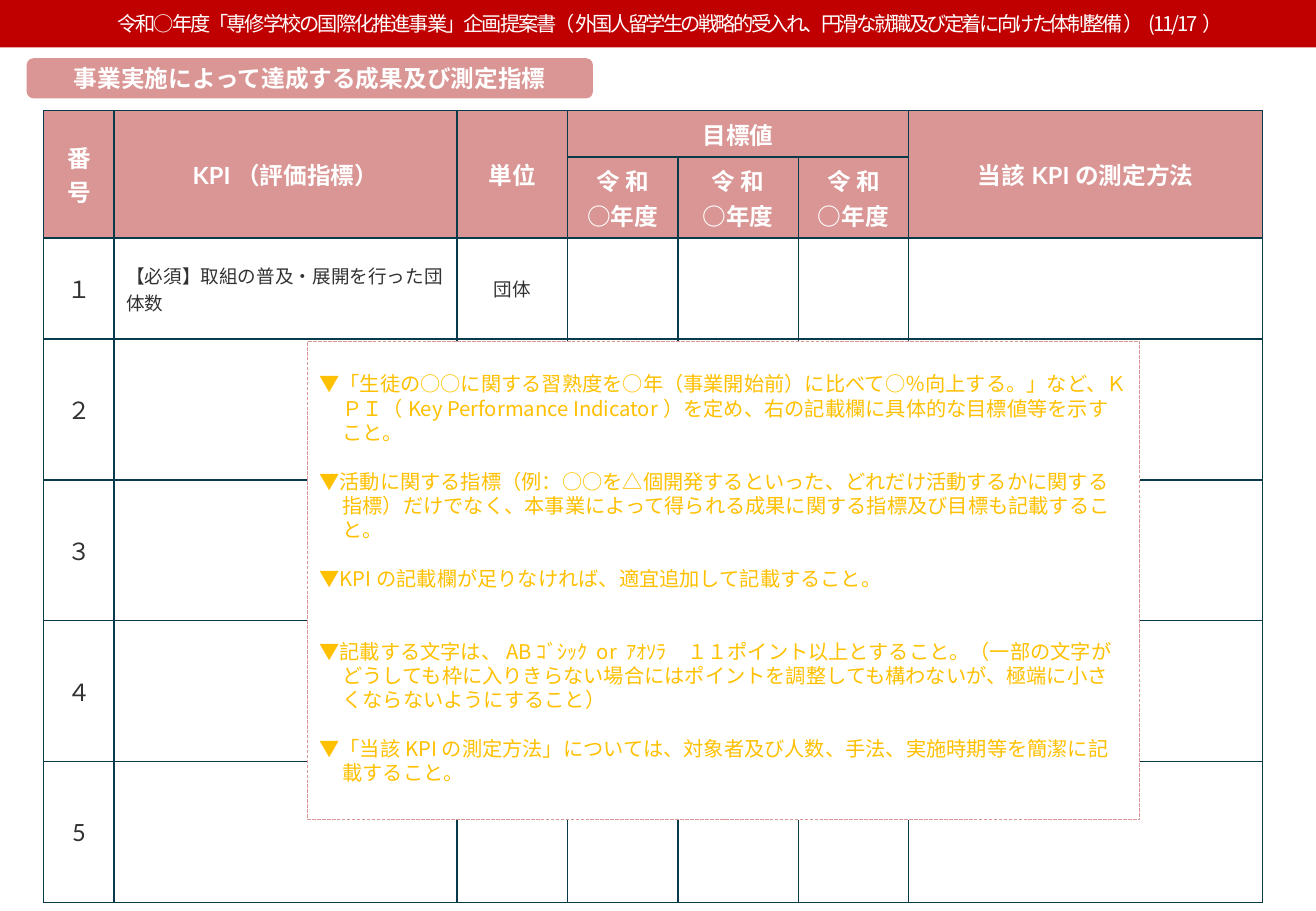
import pptx
import pptx.util
import pptx.dml.color
import pptx.enum.dml
import pptx.enum.shapes
import pptx.enum.text
import pptx.oxml
import pptx.oxml.ns
from pptx.util import Inches

# Content
TITLE = [
    ("令和○年度「専修学校の国際化推進事業」企画提案書（", -120),
    ("外国人留学生の戦略的受入れ、円滑な就職及び定着に向けた体制整備", -160),
    ("）(11/17）", -120),
]
TOPIC = "事業実施によって達成する成果及び測定指標"
HEADS = {0: "番号", 1: "KPI（評価指標）", 2: "単位", 6: "当該KPIの測定方法"}
GOAL = "目標値"
YEAR = ["令 和", "○年度"]
YEARS = (3, 4, 5)
ROWS = [
    ("１", "【必須】取組の普及・展開を行った団体数", "団体"),
    ("２",), ("３",), ("４",), ("5",),
]
# Note text and blank lines above it
NOTES = [
    ("▼「生徒の○○に関する習熟度を○年（事業開始前）に比べて○％向上する。」など、"
     "ＫＰＩ（Key Performance Indicator）を定め、右の記載欄に具体的な目標値等を示すこと。", 0),
    ("▼活動に関する指標（例：○○を△個開発するといった、どれだけ活動するかに関する指標）"
     "だけでなく、本事業によって得られる成果に関する指標及び目標も記載すること。", 1),
    ("▼KPIの記載欄が足りなければ、適宜追加して記載すること。", 1),
    ("▼記載する文字は、ABｺﾞｼｯｸ or ｱｵｿﾗ　１１ポイント以上とすること。（一部の文字が"
     "どうしても枠に入りきらない場合にはポイントを調整しても構わないが、"
     "極端に小さくならないようにすること）", 2),
    ("▼「当該KPIの測定方法」については、対象者及び人数、手法、実施時期等を簡潔に記載すること。", 1),
]
WIDTHS = [0.58, 2.82, 0.91, 0.91, 0.99, 0.91, 2.91]
HEIGHTS = [0.38, 0.57, 0.83] + [1.16] * 4
HEX = {"red": "C00000", "rose": "D99694", "white": "FFFFFF",
       "ink": "323232", "gold": "FFC000", "rule": "073B4C"}
LATO, NOTO = "Lato", "Noto Sans CJK JP"
LINE = 14.4

Pt = pptx.util.Pt
ALIGN = pptx.enum.text.PP_ALIGN
MIDDLE = pptx.enum.text.MSO_ANCHOR.MIDDLE
SHAPE = pptx.enum.shapes.MSO_SHAPE


def color(name):
    return pptx.dml.color.RGBColor.from_string(HEX[name])


def paint(item, name):
    item.fill.solid()
    item.fill.fore_color.rgb = color(name)


def add_run(para, text, size, tint, font, bold=False, gap=0):
    run = para.add_run()
    run.text = text
    run.font.size = Pt(size)
    run.font.bold = bold
    run.font.name = font
    run.font.color.rgb = color(tint)
    props = run.font._element
    east = pptx.oxml.ns.qn("a:ea")
    props.makeelement(east, {})
    face = pptx.oxml.parse_xml(
        f'<a:ea {pptx.oxml.ns.nsdecls("a")} typeface="{NOTO}"/>')
    props.append(face)
    if gap:
        props.set("spc", str(gap))


def write(frame, lines, size, tint, font, bold=False, align=ALIGN.CENTER):
    for i, text in enumerate(lines):
        para = frame.add_paragraph() if i else frame.paragraphs[0]
        para.alignment = align
        add_run(para, text, size, tint, font, bold)


def add_box(slide, kind, left, top, width, height, fill):
    box = slide.shapes.add_shape(kind, left, top, width, height)
    box.shadow.inherit = False
    paint(box, fill)
    box.line.fill.background()
    box.text_frame.word_wrap = True
    return box


def add_rules(cell):
    props = cell._tc.get_or_add_tcPr()
    for i, side in enumerate(("lnL", "lnR", "lnT", "lnB")):
        props.insert(i, pptx.oxml.parse_xml(
            f'<a:{side} {pptx.oxml.ns.nsdecls("a")} w="12700"><a:solidFill>'
            f'<a:srgbClr val="{HEX["rule"]}"/></a:solidFill></a:{side}>'))


def add_grid(slide):
    table = slide.shapes.add_table(
        len(HEIGHTS), len(WIDTHS), Inches(0.36), Inches(0.91),
        Inches(sum(WIDTHS)), Inches(sum(HEIGHTS))).table
    table.first_row = table.horz_banding = False
    for col, width in zip(table.columns, WIDTHS):
        col.width = Inches(width)
    for i, height in enumerate(HEIGHTS):
        table.rows[i].height = Inches(height)
        for cell in table.rows[i].cells:
            paint(cell, "rose" if i < 2 else "white")
            add_rules(cell)
            cell.vertical_anchor = MIDDLE

    # Heading rows
    for j, text in HEADS.items():
        table.cell(0, j).merge(table.cell(1, j))
        write(table.cell(0, j).text_frame, [text], 14, "white", LATO, True)
    table.cell(0, YEARS[0]).merge(table.cell(0, YEARS[-1]))
    write(table.cell(0, YEARS[0]).text_frame, [GOAL], 14, "white", LATO, True)
    for j in YEARS:
        write(table.cell(1, j).text_frame, YEAR, 14, "white", NOTO, True)

    # Indicator rows
    for i, row in enumerate(ROWS, 2):
        for j, text in enumerate(row):
            write(table.cell(i, j).text_frame, [text], 11 if j else 14, "ink",
                  LATO, align=ALIGN.LEFT if j == 1 else ALIGN.CENTER)


def add_notes(slide):
    box = add_box(slide, SHAPE.RECTANGLE, Inches(2.53), Inches(2.81),
                  Inches(6.85), Inches(3.94), "white")
    box.line.color.rgb = color("rose")
    box.line.width = Pt(0.75)
    box.line.dash_style = pptx.enum.dml.MSO_LINE.SQUARE_DOT
    frame = box.text_frame
    frame.vertical_anchor = pptx.enum.text.MSO_ANCHOR.TOP
    frame.margin_top = Inches(0.25)
    write(frame, [text for text, _ in NOTES], 12, "gold", NOTO, align=ALIGN.LEFT)
    for para, (_, blank) in zip(frame.paragraphs, NOTES):
        para.line_spacing = Pt(LINE)
        para.space_before = Pt(LINE * blank)
        props = para._p.get_or_add_pPr()
        props.set("marL", str(Inches(0.19)))
        props.set("indent", str(-Inches(0.19)))


def add_title(slide, width):
    add_box(slide, SHAPE.RECTANGLE, 0, 0, width, Inches(0.39), "red")
    title = slide.shapes.title
    slide.shapes._spTree.append(title._element)  # in front of the banner
    title.left, title.top = Inches(0.49), Inches(0.04)
    title.width, title.height = Inches(10.05), Inches(0.3)
    frame = title.text_frame
    frame.word_wrap = True
    frame.auto_size = pptx.enum.text.MSO_AUTO_SIZE.NONE
    frame.vertical_anchor = MIDDLE
    para = frame.paragraphs[0]
    para.alignment = ALIGN.CENTER
    for text, gap in TITLE:
        add_run(para, text, 12, "white", NOTO, gap=gap)


def main():
    deck = pptx.Presentation()
    deck.slide_width, deck.slide_height = Inches(10.83), Inches(7.5)
    slide = deck.slides.add_slide(deck.slide_layouts[5])

    # Section label
    label = add_box(slide, SHAPE.ROUNDED_RECTANGLE, Inches(0.22), Inches(0.48),
                    Inches(4.66), Inches(0.33), "rose")
    label.text_frame.vertical_anchor = MIDDLE
    write(label.text_frame, [TOPIC], 14, "white", LATO, True)

    add_grid(slide)
    add_notes(slide)
    add_title(slide, deck.slide_width)
    deck.save("out.pptx")


if __name__ == "__main__":
    main()
